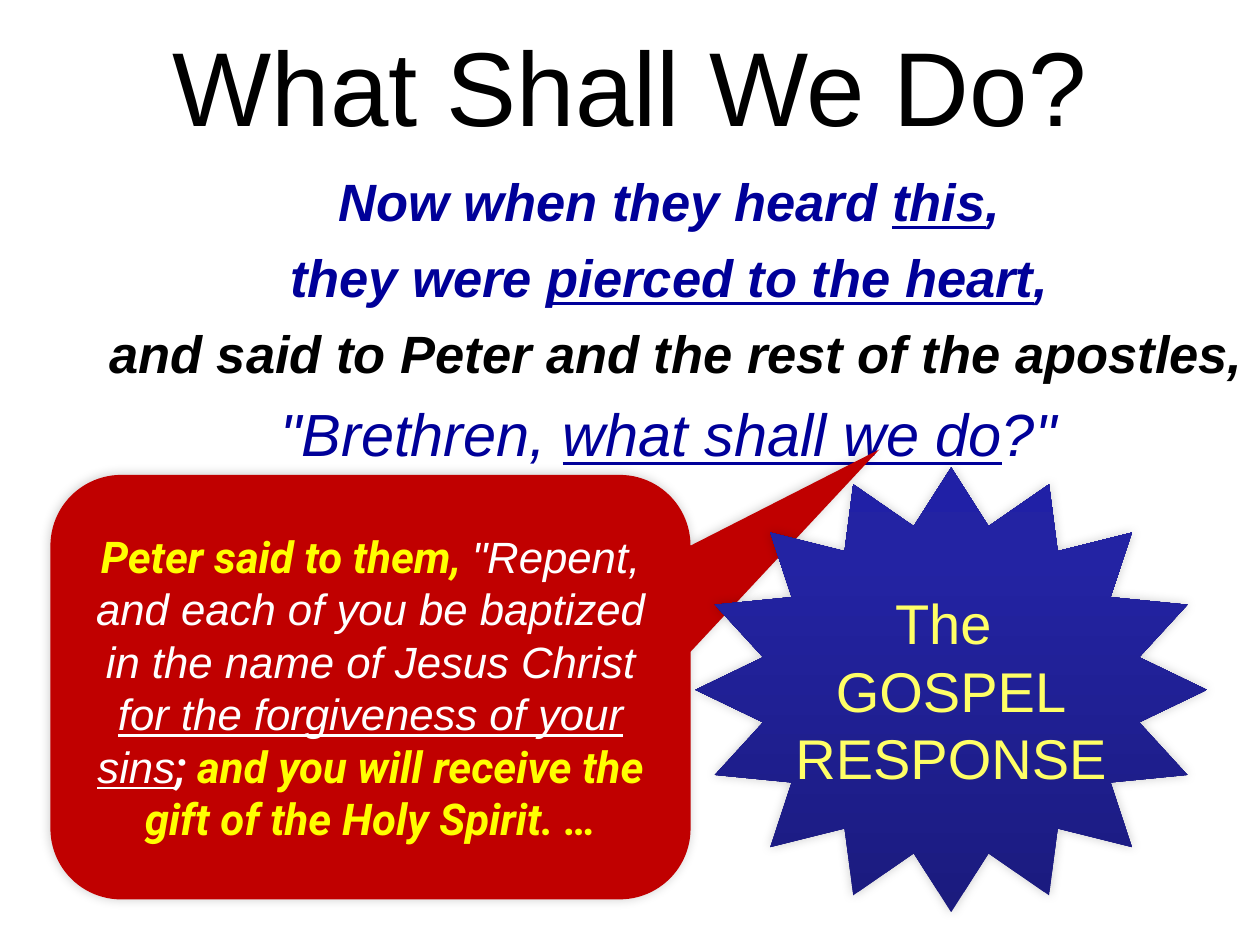
import pptx
import pptx.util
import pptx.dml.color
import pptx.enum.shapes
import pptx.enum.text
import pptx.oxml
import pptx.oxml.ns

Pt = pptx.util.Pt
SHAPE = pptx.enum.shapes.MSO_SHAPE
ANCHOR = pptx.enum.text.MSO_ANCHOR
NAVY, BLACK, WHITE, YELLOW, LEMON = "000099", "000000", "FFFFFF", "FFFF00", "FFFF66"


def rgb(value):
    return pptx.dml.color.RGBColor.from_string(value)


def write(sp, lines, anchor, frame={}, para={}):
    """Fill a shape with centred lines, each a list of (text, font values)."""
    tf = sp.text_frame
    for name, value in {"word_wrap": True, "vertical_anchor": anchor, **frame}.items():
        setattr(tf, name, value)
    for i, line in enumerate(lines):
        p = tf.add_paragraph() if i else tf.paragraphs[0]
        p.alignment = pptx.enum.text.PP_ALIGN.CENTER
        for name, value in para.items():
            if i or name != "space_before":
                setattr(p, name, value)
        for text, font in line:
            r = p.add_run()
            r.text = text
            for name, value in font.items():
                if name == "color":
                    r.font.color.rgb = rgb(value)
                else:
                    setattr(r.font, name, value)


prs = pptx.Presentation()
prs.slide_width, prs.slide_height = Pt(720), Pt(540)
s = prs.slides.add_slide(prs.slide_layouts[6])

# Title
sp = s.shapes.add_textbox(Pt(0), Pt(6.5), Pt(720), Pt(90))
margins = dict.fromkeys(("margin_left", "margin_top", "margin_right", "margin_bottom"), 0)
title = {"name": "Arial", "size": Pt(60), "color": BLACK}
write(sp, [[("What Shall We Do?", title)]], ANCHOR.MIDDLE, margins, {"line_spacing": 0.95})

# Verse
sp = s.shapes.add_shape(SHAPE.RECTANGLE, Pt(53.3), Pt(93), Pt(666.7), Pt(447))
sp.shadow.inherit = False
sp.fill.solid()
sp.fill.fore_color.rgb = rgb(WHITE)
sp.line.fill.background()
verse = {"name": "Arial", "size": Pt(30), "color": NAVY, "bold": True, "italic": True}
key = {**verse, "underline": True}
quote = {**verse, "size": Pt(34), "bold": False}
lines = [
    [("Now when they heard ", verse), ("this", key), (", ", verse)],
    [("they were ", verse), ("pierced to the heart", key), (", ", verse)],
    [("and said to Peter and the rest of the apostles,", {**verse, "color": BLACK})],
    [('"Brethren, ', quote), ("what shall we do", {**quote, "underline": True}), ('?" ', quote)],
]
write(sp, lines, ANCHOR.TOP, para={"space_before": Pt(7.5)})

# Answer callout and starburst
callout = s.shapes.add_shape(SHAPE.ROUNDED_RECTANGULAR_CALLOUT, Pt(28.8), Pt(271.4), Pt(365.8), Pt(242.6))
star = s.shapes.add_shape(SHAPE.STAR_16_POINT, Pt(397.4), Pt(267.1), Pt(292.3), Pt(254.2))
for sp, adjustments in ((callout, (0.795, -0.56, 0.167)), (star, (0.375,))):
    for i, value in enumerate(adjustments):
        sp.adjustments[i] = value
    sp.line.fill.background()

callout.fill.solid()
callout.fill.fore_color.rgb = rgb("C00000")

# Three-stop gradient, dark at the bottom
ns = pptx.oxml.ns.nsdecls("a")
stops = "".join(
    f'<a:gs pos="{pos * 1000}"><a:srgbClr val="{color}"/></a:gs>'
    for pos, color in ((0, "1B1B7E"), (80, "2323A3"), (100, "2020A6"))
)
star.fill.gradient()
grad = star.element.spPr.find(pptx.oxml.ns.qn("a:gradFill"))
grad.getparent().replace(grad, pptx.oxml.parse_xml(
    f'<a:gradFill {ns} rotWithShape="1"><a:gsLst>{stops}</a:gsLst>'
    '<a:lin ang="16200000" scaled="0"/></a:gradFill>'))

# Soft shadows
for sp in (callout, star):
    sp.shadow.inherit = False
    effects = sp.element.spPr.find(pptx.oxml.ns.qn("a:effectLst"))
    effects.append(pptx.oxml.parse_xml(
        f'<a:outerShdw {ns} blurRad="{Pt(6)}" dist="0" dir="18900000" rotWithShape="0">'
        '<a:srgbClr val="000000"><a:alpha val="20000"/></a:srgbClr></a:outerShdw>'))

strong = {"name": "Roboto", "size": Pt(25), "color": YELLOW, "bold": True, "italic": True}
plain = {**strong, "name": "Arial", "color": WHITE, "bold": False}
answer = [
    ("Peter said to them, ", strong),
    ('"Repent, and each of you be baptized in the name of Jesus Christ ', plain),
    ("for the forgiveness of your sins", {**plain, "underline": True}),
    (";", {**strong, "color": WHITE}),
    (" and you will receive the gift of the Holy Spirit. …", strong),
]
write(callout, [answer], ANCHOR.MIDDLE)

burst = {"name": "Arial", "size": Pt(32), "color": LEMON}
write(star, [[(word, burst)] for word in ("The ", "GOSPEL", "RESPONSE")],
      ANCHOR.MIDDLE, {"word_wrap": False})

prs.save("out.pptx")
